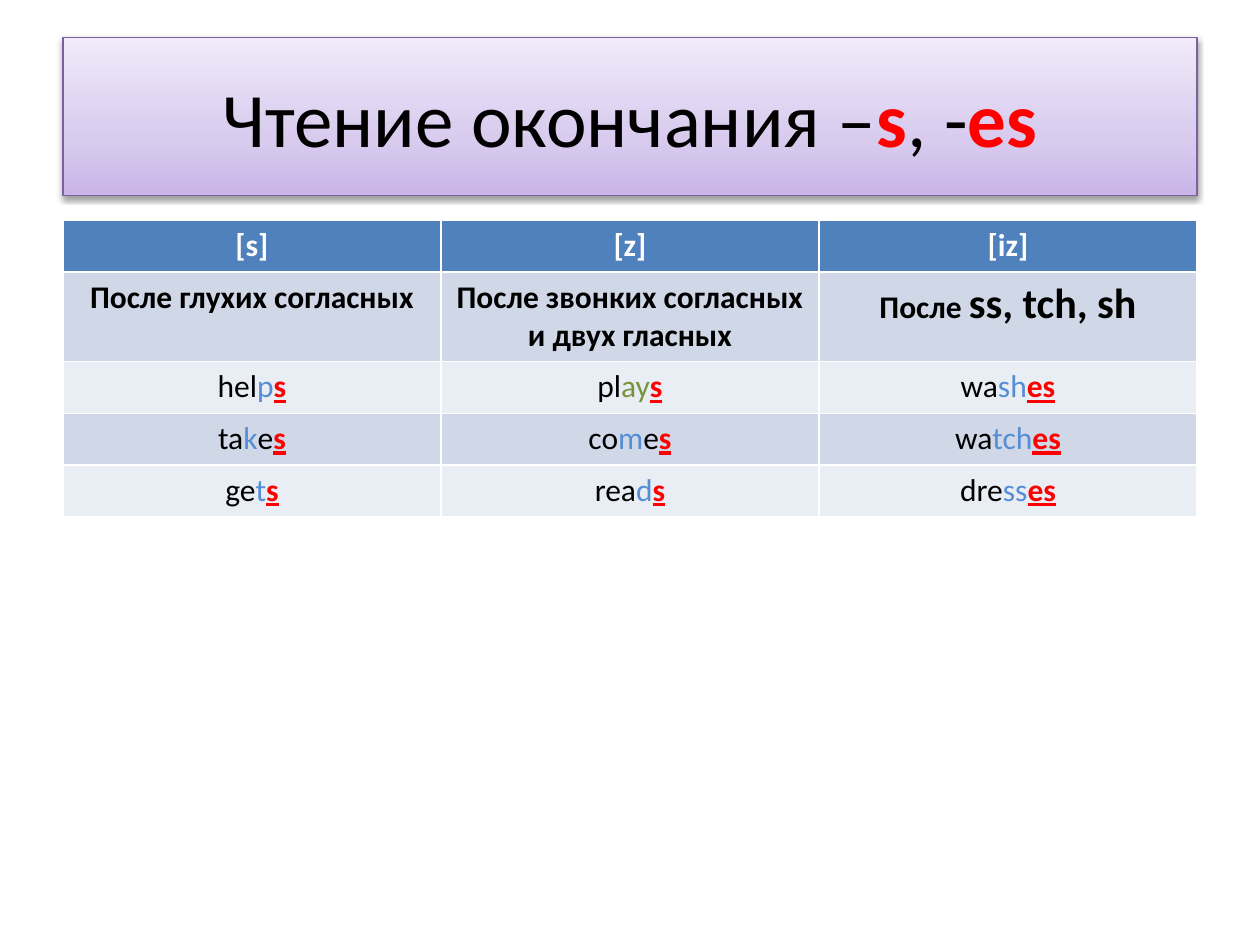
from pptx import Presentation
from pptx.dml.color import RGBColor
from pptx.enum.text import MSO_ANCHOR, PP_ALIGN
from pptx.oxml import parse_xml
from pptx.oxml.ns import nsdecls
from pptx.util import Pt

PX = 9144  # 100 px to the inch
BLACK = RGBColor(0x00, 0x00, 0x00)
WHITE = RGBColor(0xFF, 0xFF, 0xFF)
RED = RGBColor(0xFF, 0x00, 0x00)
BLUE = RGBColor(0x55, 0x8E, 0xD5)
GREEN = RGBColor(0x77, 0x93, 0x3C)
PURPLE = RGBColor(0x7D, 0x60, 0xA0)
HEADER_FILL = RGBColor(0x4F, 0x81, 0xBD)
BAND_FILLS = [RGBColor(0xE9, 0xED, 0xF4), RGBColor(0xD0, 0xD8, 0xE8)]

# Run formats
BASE = dict(name="Calibri", size=Pt(18), bold=False)
HEAD = dict(color=WHITE, bold=True)
RULE = dict(color=BLACK, bold=True)
BIG = dict(RULE, size=Pt(24))
STEM = dict(color=BLACK)
SOUND = dict(color=BLUE)
VOWEL = dict(color=GREEN)
ENDING = dict(color=RED, bold=True, underline=True)
TITLE = dict(color=BLACK, size=Pt(44))
TITLE_MARK = dict(color=RED, bold=True, size=Pt(44))


def write(tf, runs):
    p = tf.paragraphs[0]
    p.alignment = PP_ALIGN.CENTER
    for text, style in runs:
        r = p.add_run()
        r.text = text
        for key, value in {**BASE, **style}.items():
            if key == "color":
                r.font.color.rgb = value
            else:
                setattr(r.font, key, value)


prs = Presentation()
prs.slide_width, prs.slide_height = 1000 * PX, 750 * PX
s = prs.slides.add_slide(prs.slide_layouts[5])

# Title with gradient and shadow
sp = s.shapes.title
sp.left, sp.top, sp.width, sp.height = [v * PX for v in (50, 30, 900, 125)]
sp.line.color.rgb = PURPLE
sp.line.width = Pt(0.75)
stops = "".join(
    f'<a:gs pos="{pos * 1000}"><a:srgbClr val="{color}"/></a:gs>'
    for pos, color in [(0, "C9B5E8"), (35, "D8CBEE"), (100, "F0EAF9")])
sp.line._ln.addprevious(parse_xml(
    f'<a:gradFill {nsdecls("a")} rotWithShape="1"><a:gsLst>{stops}</a:gsLst>'
    '<a:lin ang="16200000" scaled="1"/></a:gradFill>'))
sp.line._ln.addnext(parse_xml(
    f'<a:effectLst {nsdecls("a")}><a:outerShdw blurRad="{Pt(3.1)}" '
    f'dist="{Pt(1.6)}" dir="5400000" rotWithShape="0"><a:srgbClr val="000000">'
    '<a:alpha val="38000"/></a:srgbClr></a:outerShdw></a:effectLst>'))
sp.text_frame.vertical_anchor = MSO_ANCHOR.MIDDLE
write(sp.text_frame, [("Чтение окончания –", TITLE), ("s", TITLE_MARK),
                      (", -", TITLE), ("es", TITLE_MARK)])

# Table: sounds, rules, examples
rows = [
    [[("[s]", HEAD)], [("[z]", HEAD)], [("[iz]", HEAD)]],
    [[("После глухих согласных", RULE)],
     [("После звонких согласных и двух гласных", RULE)],
     [("После ", RULE), ("ss, tch, sh", BIG)]],
    [[("hel", STEM), ("p", SOUND), ("s", ENDING)],
     [("pl", STEM), ("ay", VOWEL), ("s", ENDING)],
     [("wa", STEM), ("sh", SOUND), ("es", ENDING)]],
    [[("ta", STEM), ("k", SOUND), ("e", STEM), ("s", ENDING)],
     [("co", STEM), ("m", SOUND), ("e", STEM), ("s", ENDING)],
     [("wa", STEM), ("tch", SOUND), ("es", ENDING)]],
    [[("ge", STEM), ("t", SOUND), ("s", ENDING)],
     [("rea", STEM), ("d", SOUND), ("s", ENDING)],
     [("dre", STEM), ("ss", SOUND), ("es", ENDING)]],
]
ROW_H, RULE_H = 41, 70
table = s.shapes.add_table(
    len(rows), 3, 50 * PX, 175 * PX, 900 * PX,
    (ROW_H * (len(rows) - 1) + RULE_H) * PX).table
for i, row in enumerate(rows):
    table.rows[i].height = (RULE_H if i == 1 else ROW_H) * PX
    for j, runs in enumerate(row):
        cell = table.cell(i, j)
        cell.fill.solid()
        cell.fill.fore_color.rgb = BAND_FILLS[i % 2] if i else HEADER_FILL
        write(cell.text_frame, runs)

prs.save("out.pptx")
